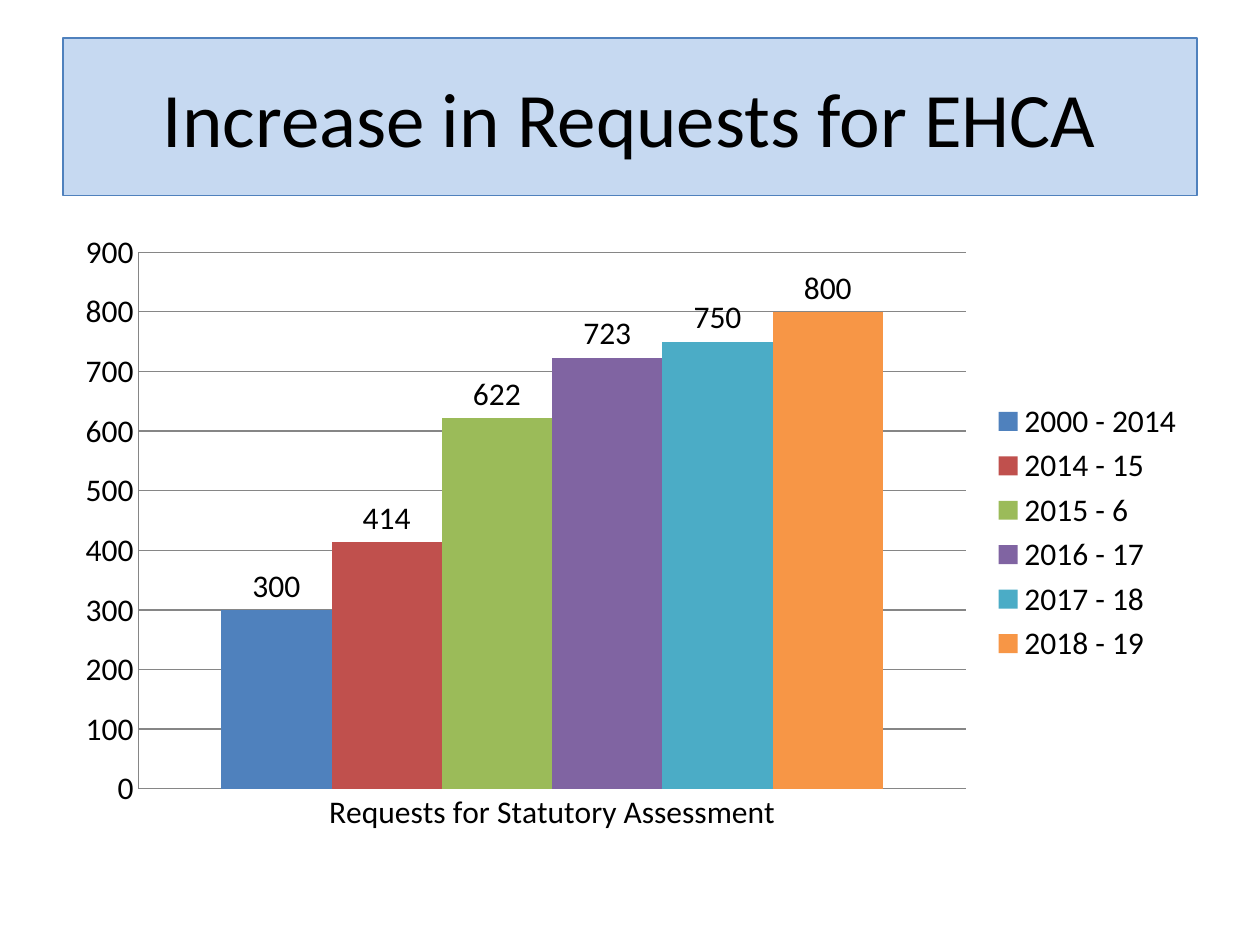
from pptx import Presentation
from pptx.chart.data import CategoryChartData
from pptx.dml.color import RGBColor
from pptx.enum.chart import XL_CHART_TYPE as ChartType
from pptx.enum.chart import XL_LABEL_POSITION as LabelPosition
from pptx.enum.chart import XL_LEGEND_POSITION as LegendPosition
from pptx.enum.chart import XL_TICK_MARK as TickMark
from pptx.enum.text import MSO_ANCHOR as Anchor
from pptx.enum.text import PP_ALIGN as Align
from pptx.util import Cm, Pt

FONT = "Calibri"
BLACK, GRID_GREY = "000000", "868686"
TITLE_FILL, TITLE_LINE = "C6D9F1", "4F81BD"
LEFT, WIDTH = Cm(1.27), Cm(22.86)

REQUESTS = [
    ("2000 - 2014", 300, "4F81BD"),
    ("2014 - 15", 414, "C0504D"),
    ("2015 - 6", 622, "9BBB59"),
    ("2016 - 17", 723, "8064A2"),
    ("2017 - 18", 750, "4BACC6"),
    ("2018 - 19", 800, "F79646"),
]


def color(hex_value):
    return RGBColor.from_string(hex_value)


def set_values(target, values):
    for name, value in values.items():
        setattr(target, name, value)


def style_font(font, size):
    set_values(font, {"name": FONT, "size": Pt(size)})
    font.color.rgb = color(BLACK)


def style_line(line, hex_value, width):
    line.color.rgb = color(hex_value)
    line.width = Pt(width)


def add_title(slide, text):
    title = slide.shapes.title
    set_values(title, {"left": LEFT, "top": Cm(0.76),
                       "width": WIDTH, "height": Cm(3.18)})
    title.fill.solid()
    title.fill.fore_color.rgb = color(TITLE_FILL)
    style_line(title.line, TITLE_LINE, 1)
    title.text_frame.text = text
    title.text_frame.vertical_anchor = Anchor.MIDDLE
    paragraph = title.text_frame.paragraphs[0]
    paragraph.alignment = Align.CENTER
    style_font(paragraph.runs[0].font, 44)


def style_series(series, fill):
    series.invert_if_negative = False
    series.format.fill.solid()
    series.format.fill.fore_color.rgb = color(fill)
    labels = series.data_labels
    set_values(labels, {"show_value": True,
                        "position": LabelPosition.OUTSIDE_END})
    style_font(labels.font, 18)


def style_axes(chart):
    for axis in (chart.category_axis, chart.value_axis):
        set_values(axis, {"major_tick_mark": TickMark.NONE,
                          "minor_tick_mark": TickMark.NONE})
        style_line(axis.format.line, GRID_GREY, 0.75)
    value_axis = chart.value_axis
    set_values(value_axis, {"minimum_scale": 0, "maximum_scale": 900,
                            "major_unit": 100, "has_major_gridlines": True})
    style_line(value_axis.major_gridlines.format.line, GRID_GREY, 0.75)


def add_requests_chart(slide):
    data = CategoryChartData()
    data.categories = ["Requests for Statutory Assessment"]
    for name, value, _ in REQUESTS:
        data.add_series(name, [value])
    chart = slide.shapes.add_chart(ChartType.COLUMN_CLUSTERED, LEFT, Cm(4.45),
                                   WIDTH, Cm(12.57), data).chart
    set_values(chart, {"has_title": False, "has_legend": True})
    style_font(chart.font, 18)
    set_values(chart.legend, {"position": LegendPosition.RIGHT,
                              "include_in_layout": False})
    plot = chart.plots[0]
    set_values(plot, {"gap_width": 150, "overlap": 0,
                      "vary_by_categories": False})
    for series, (_, _, fill) in zip(plot.series, REQUESTS):
        style_series(series, fill)
    style_axes(chart)


def main():
    presentation = Presentation()
    set_values(presentation, {"slide_width": Cm(25.4),
                              "slide_height": Cm(19.05)})
    slide = presentation.slides.add_slide(presentation.slide_layouts[5])
    add_title(slide, "Increase in Requests for EHCA")
    add_requests_chart(slide)
    presentation.save("out.pptx")


if __name__ == "__main__":
    main()
